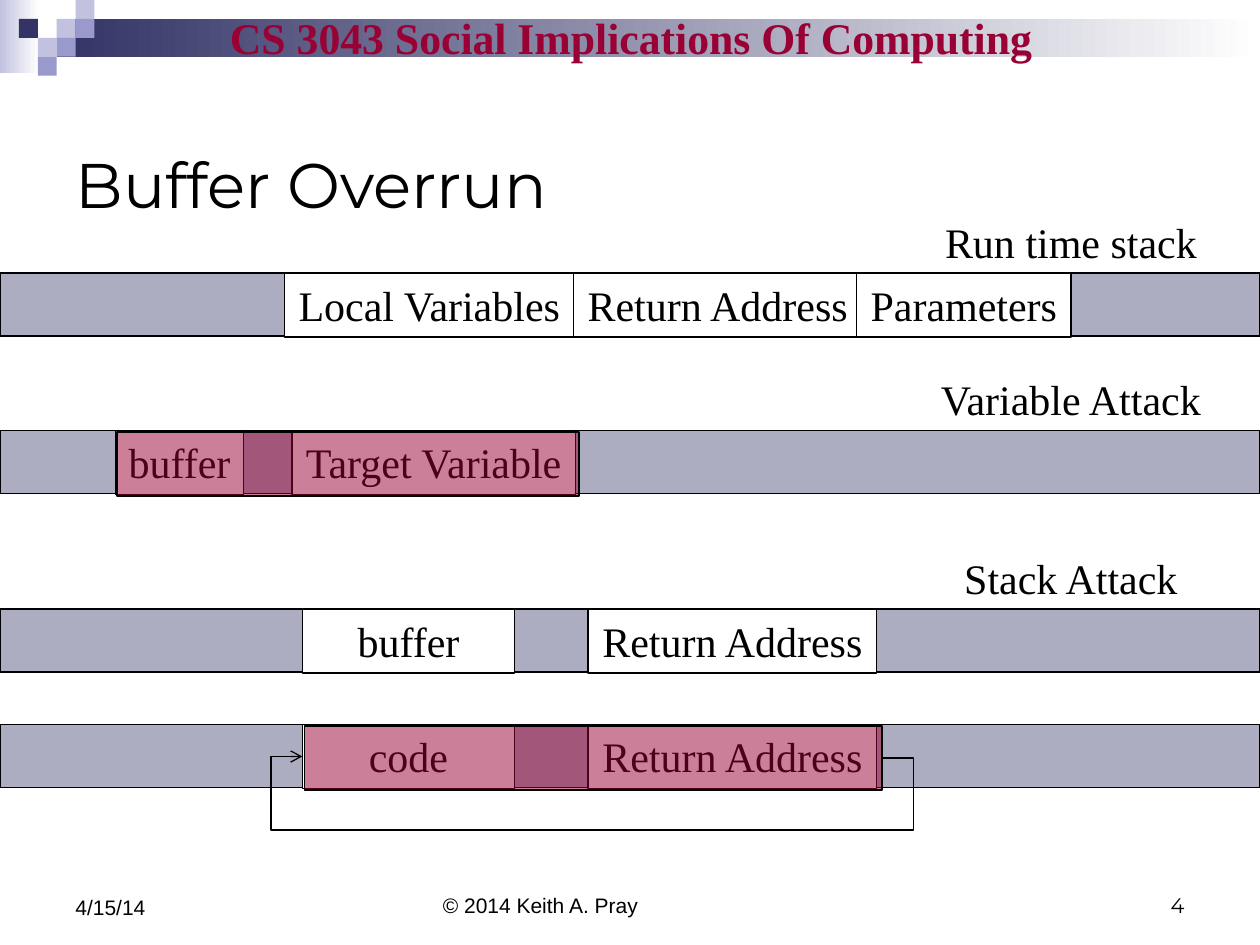
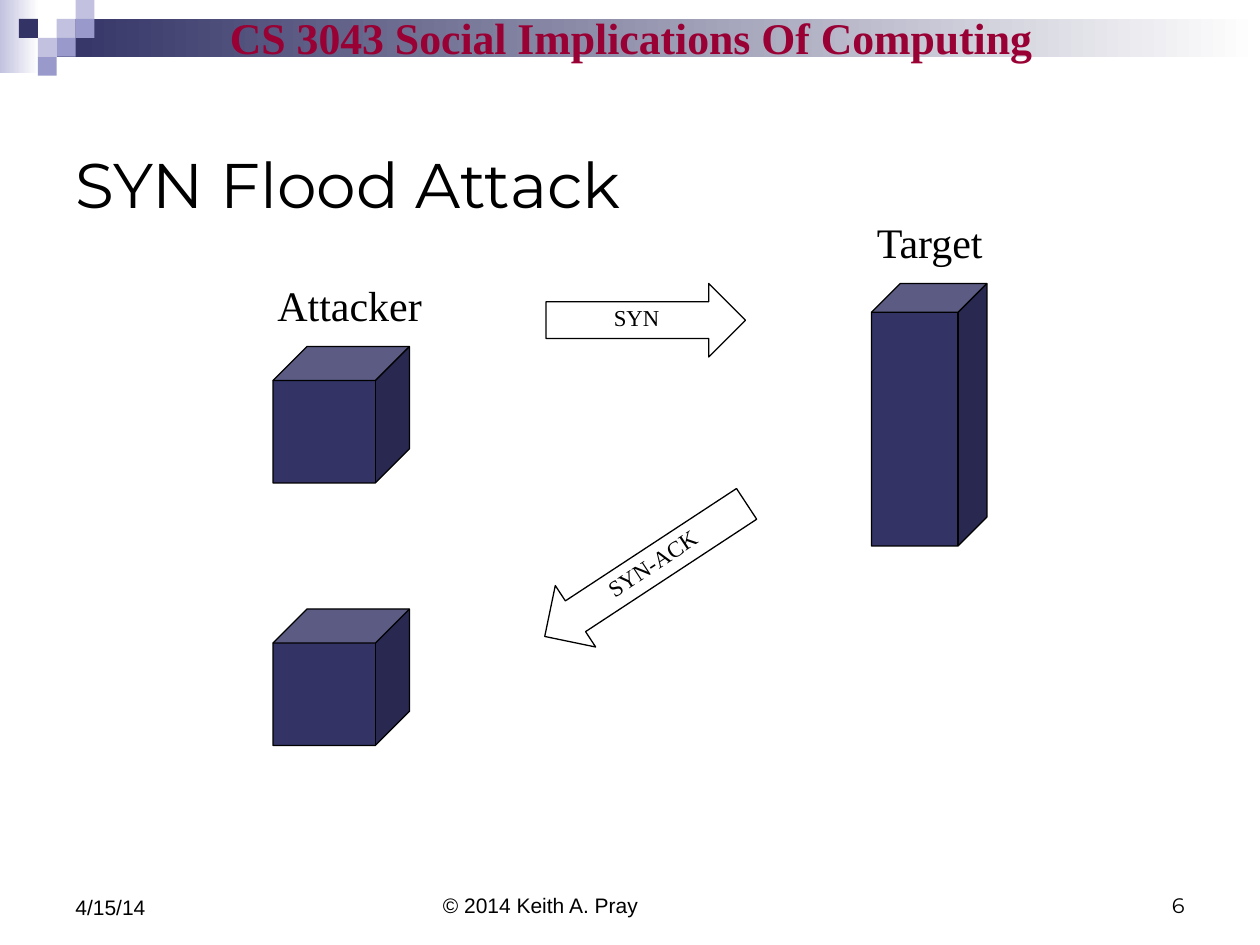
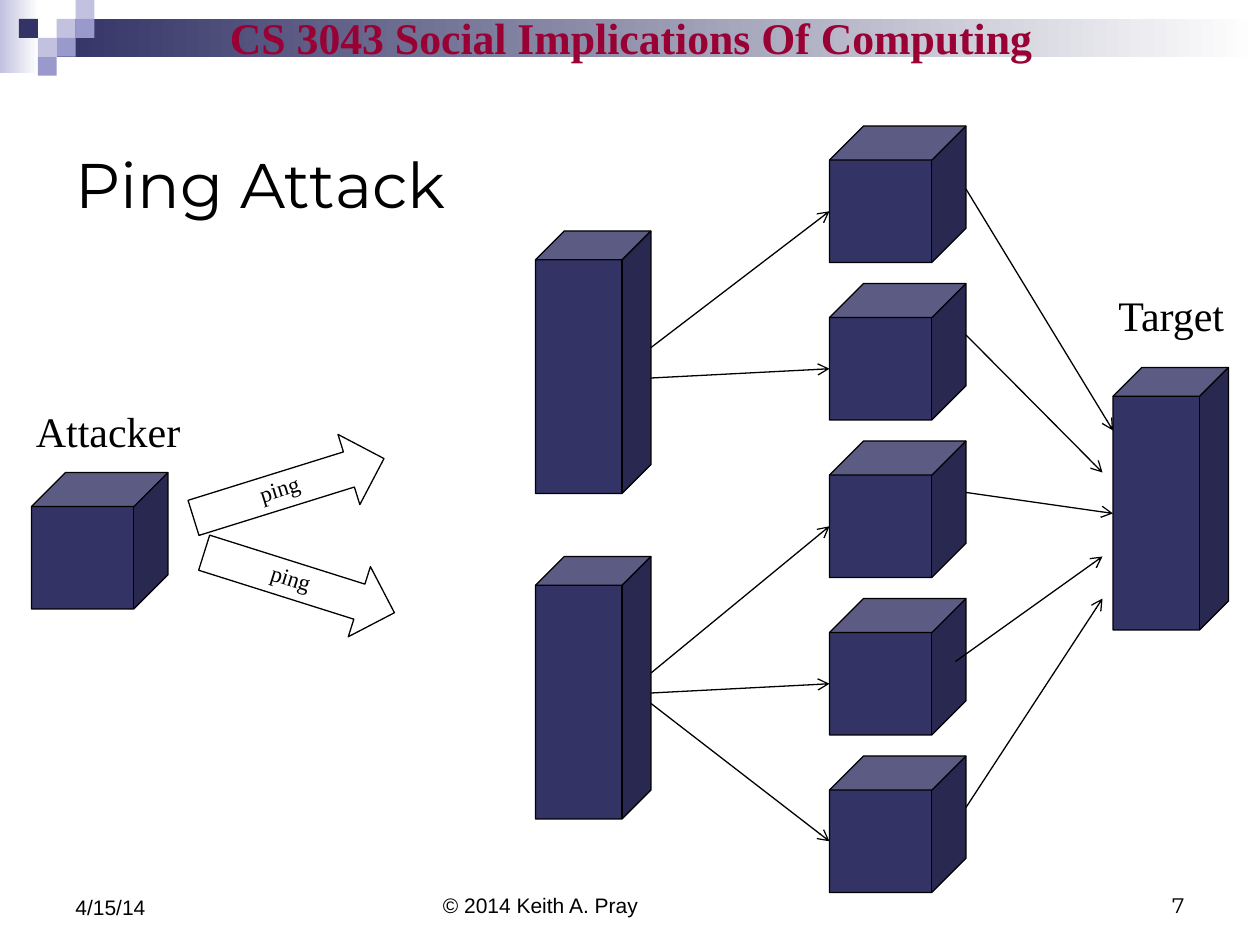
from pptx import Presentation
from pptx import util as u
from pptx.dml.color import RGBColor
from pptx.enum import shapes, text
from pptx.oxml import parse_xml
from pptx.oxml.ns import nsdecls, qn

COLUMNS, ROWS = 120, 90
WIDTH, HEIGHT = u.Inches(10), u.Inches(7.5)
NAVY, CRIMSON, LILAC, VIOLET = "333366", "990033", "C2C2E0", "9999CC"
BLACK, WHITE = "000000", "FFFFFF"
SERIF, SANS, DISPLAY = "Times New Roman", "Arial", "Montserrat"
LEFT, CENTER, RIGHT = text.PP_ALIGN.LEFT, text.PP_ALIGN.CENTER, text.PP_ALIGN.RIGHT
TOP, MIDDLE, BOTTOM = text.MSO_ANCHOR.TOP, text.MSO_ANCHOR.MIDDLE, text.MSO_ANCHOR.BOTTOM
PRESET = shapes.MSO_SHAPE
TILE = 1.8
COMPUTER, SERVER, ARROW = (13, 13), (11, 25), (19, 7)
BAR_HEIGHT, CELL_HEIGHT, OVERRUN_SHIFT = 6, 6.1, 0.15


def place(*box):
    """Turn columns and rows, in x, y pairs, into slide lengths."""
    sides = (WIDTH / COLUMNS, HEIGHT / ROWS)
    return [u.Emu(round(length * sides[i % 2])) for i, length in enumerate(box)]


def rgb(value):
    """Turn a hex string into a colour."""
    return RGBColor.from_string(value)


def assign(target, formats):
    """Set each attribute named in a dict of format values."""
    for key, value in formats.items():
        setattr(target, key, value)


def write(shape, words, size, face=SERIF, color=BLACK, bold=False,
          align=CENTER, anchor=TOP, wrap=False, spacing=1.0):
    """Write one formatted paragraph into a shape."""
    assign(shape.text_frame, {"text": words, "word_wrap": wrap, "vertical_anchor": anchor,
                              "auto_size": text.MSO_AUTO_SIZE.NONE})
    paragraph = shape.text_frame.paragraphs[0]
    assign(paragraph, {"alignment": align, "line_spacing": spacing})
    assign(paragraph.font, {"size": u.Pt(size), "name": face, "bold": bold})
    paragraph.font.color.rgb = rgb(color)


def label(slide, words, box, size=24, **formats):
    """Add plain text in a box."""
    caption = slide.shapes.add_textbox(*place(*box))
    write(caption, words, size, **formats)
    return caption


def draw(slide, preset, box, fill=None, alpha=None, outlined=True):
    """Add a flat preset shape, with a thin black outline if wanted."""
    shape = slide.shapes.add_shape(preset, *place(*box))
    shape.shadow.inherit = False
    if fill:
        shape.fill.solid()
        shape.fill.fore_color.rgb = rgb(fill)
    else:
        shape.fill.background()
    if alpha:
        tint = shape.element.spPr.find(".//" + qn("a:srgbClr"))
        tint.append(parse_xml(f'<a:alpha {nsdecls("a")} val="{alpha * 1000}"/>'))
    if outlined:
        shape.line.width = u.Pt(0.75)
        shape.line.color.rgb = rgb(BLACK)
    else:
        shape.line.fill.background()
    return shape


def fade(slide, box, start):
    """Add a band that fades from a colour to white."""
    band = draw(slide, PRESET.RECTANGLE, box, start, outlined=False)
    band.fill.gradient()
    band.fill.gradient_angle = 0
    for stop, color in zip(band.fill.gradient_stops, (start, WHITE)):
        stop.color.rgb = rgb(color)
    return band


def join(slide, start, end, kind=shapes.MSO_CONNECTOR.STRAIGHT):
    """Add a thin black arrow between two grid points."""
    arrow = slide.shapes.add_connector(kind, *place(*start, *end))
    arrow.line.width = u.Pt(0.75)
    arrow.line.color.rgb = rgb(BLACK)
    arrow.line._get_or_add_ln().append(parse_xml(f'<a:tailEnd {nsdecls("a")} type="arrow"/>'))
    arrow.element.spPr.append(parse_xml(f'<a:effectLst {nsdecls("a")}/>'))
    return arrow


def header(slide, layout):
    """Build the course banner and move it to the layout that all slides share."""
    tiles = [(2, 1, LILAC), (3, 0, LILAC), (3, 1, VIOLET), (1, 2, LILAC),
             (0, 1, NAVY), (2, 2, VIOLET), (1, 3, VIOLET)]
    parts = [fade(slide, (0, 0, 3.7, 7), LILAC), fade(slide, (5.4, TILE, 114.6, 2 * TILE), NAVY)]
    parts += [draw(slide, PRESET.RECTANGLE, (1.8 + column * TILE, row * TILE, TILE, TILE),
                   color, outlined=False) for column, row, color in tiles]
    parts.append(label(slide, "CS 3043 Social Implications Of Computing", (20.6, 0.4, 79, 6.2),
                       25, color=CRIMSON, bold=True, anchor=MIDDLE))
    for number, part in enumerate(parts, 100):
        part.element.nvSpPr.cNvPr.set("id", str(number))
        layout.shapes.element.append(part.element)


def new_slide(deck, title, number):
    """Add a slide with its title and footers."""
    slide = deck.slides.add_slide(deck.slide_layouts[5])
    heading = slide.shapes.title
    assign(heading, dict(zip(("left", "top", "width", "height"), place(6, 10, 108, 15))))
    write(heading, title, 36, DISPLAY, align=LEFT, anchor=MIDDLE, wrap=True)
    footers = [("© 2014 Keith A. Pray", (41, 82, 38, 6), SANS, LEFT),
               (str(number), (86, 82, 28, 6), DISPLAY, RIGHT),
               ("4/15/14", (6, 82, 28, 6.2), SANS, LEFT)]
    for words, box, face, align in footers:
        label(slide, words, box, 12, face=face, align=align, anchor=BOTTOM, wrap=True)
    return slide


def stack(slide, top, cells, caption=None, overrun=None):
    """Draw a memory bar with named cells; return its first cell and its overrun."""
    draw(slide, PRESET.RECTANGLE, (0, top, COLUMNS, BAR_HEIGHT), NAVY, 40)
    named = []
    for words, left, width in cells:
        cell = draw(slide, PRESET.RECTANGLE, (left, top, width, CELL_HEIGHT), WHITE)
        write(cell, words, 24)
        named.append(cell)
    if caption:
        label(slide, caption, (84, top - 6, 36, 6), wrap=True)
    spill = None
    if overrun:
        left, width = overrun
        spill = draw(slide, PRESET.RECTANGLE,
                     (left, top + OVERRUN_SHIFT, width, CELL_HEIGHT), CRIMSON, 50)
    return named[0], spill


def jump_back(slide, spill, code, side=3, drop=6.8):
    """Lead an arrow from the overrun, below the bar, back to the code."""
    jump = join(slide, (0, 0), (1, 1), shapes.MSO_CONNECTOR.ELBOW)
    jump.begin_connect(spill, 3)
    jump.end_connect(code, 1)
    across, down = place(side, drop)
    reach = across / jump.width
    bends = (-reach, -down / jump.height, 1 + reach)
    geometry = jump.element.spPr.prstGeom
    geometry.set("prst", "bentConnector5")
    guides = geometry.get_or_add_avLst()
    for number, bend in enumerate(bends, 1):
        guides.append(parse_xml(f'<a:gd {nsdecls("a")} name="adj{number}" '
                                f'fmla="val {round(bend * 100000)}"/>'))


def host(slide, left, top, size):
    """Draw a machine as a cube."""
    draw(slide, PRESET.CUBE, (left, top, *size), NAVY)


def packet(slide, words, left, top, size=ARROW, turn=0, preset=PRESET.RIGHT_ARROW):
    """Draw a block arrow that names the message sent."""
    message = draw(slide, preset, (left, top, *size))
    write(message, words, 13, anchor=MIDDLE, spacing=0.8)
    message.rotation = turn


def attacker(slide, left, top):
    """Draw the attacking computer under its label."""
    host(slide, left, top, COMPUTER)
    label(slide, "Attacker", (left - 1, top - 7, 16.6, 6.1))


def target(slide, left, top, gap):
    """Draw the target server under its label."""
    host(slide, left, top, SERVER)
    label(slide, "Target", (left - 0.8, top - gap, 12.7, 6))


def buffer_overrun(slide):
    """Show the run time stack and two attacks on it."""
    stack(slide, 26, [("Local Variables", 27.1, 27.6), ("Return Address", 54.6, 27.5),
                      ("Parameters", 81.6, 20.4)], "Run time stack")
    stack(slide, 41, [("buffer", 11, 12.2), ("Target Variable", 27.8, 27)],
          "Variable Attack", (11.15, 44))
    address = ("Return Address", 56, 27.5)
    stack(slide, 58, [("buffer", 28.8, 20.2), address], "Stack Attack")
    code, spill = stack(slide, 69, [("code", 28.8, 20.2), address], overrun=(29, 55))
    jump_back(slide, spill, code)


def syn_flood(slide):
    """Show the handshake that is left half open."""
    attacker(slide, 26, 33)
    host(slide, 26, 58, COMPUTER)
    target(slide, 83, 27, 7)
    packet(slide, "SYN", 52, 27)
    packet(slide, "SYN-ACK", 50, 50.8, (23, 7), 326.7, PRESET.LEFT_ARROW)


def ping_attack(slide):
    """Show pings relayed through servers and computers to the target."""
    attacker(slide, 3, 45)
    packet(slide, "ping", 18, 43, turn=342.7)
    packet(slide, "ping", 19, 52, turn=17.5)
    for top in (22, 53):
        host(slide, 51, top, SERVER)
    target(slide, 106, 35, 8)
    relay_starts = [33.1, 36, 64.1, 66, 67]
    flood = [((92, 18), (106, 41)), ((92, 31.9), (105, 45)), ((92, 46.9), (106, 48.9)),
             ((91, 63), (105, 53)), ((92, 76.9), (105, 57))]
    tops = [12 + 15 * row for row in range(5)]
    for top in tops:
        host(slide, 79, top, COMPUTER)
    for top, start, (leave, arrive) in zip(tops, relay_starts, flood):
        join(slide, (62, start), (79, top + COMPUTER[1] * 0.625))
        join(slide, leave, arrive)


def main():
    """Build and save the deck."""
    deck = Presentation()
    deck.slide_width, deck.slide_height = WIDTH, HEIGHT
    pages = [("Buffer Overrun", 4, buffer_overrun), ("SYN Flood Attack", 6, syn_flood),
             ("Ping Attack", 7, ping_attack)]
    for title, number, fill_page in pages:
        fill_page(new_slide(deck, title, number))
    header(deck.slides[0], deck.slide_layouts[5])
    deck.save("out.pptx")


if __name__ == "__main__":
    main()
